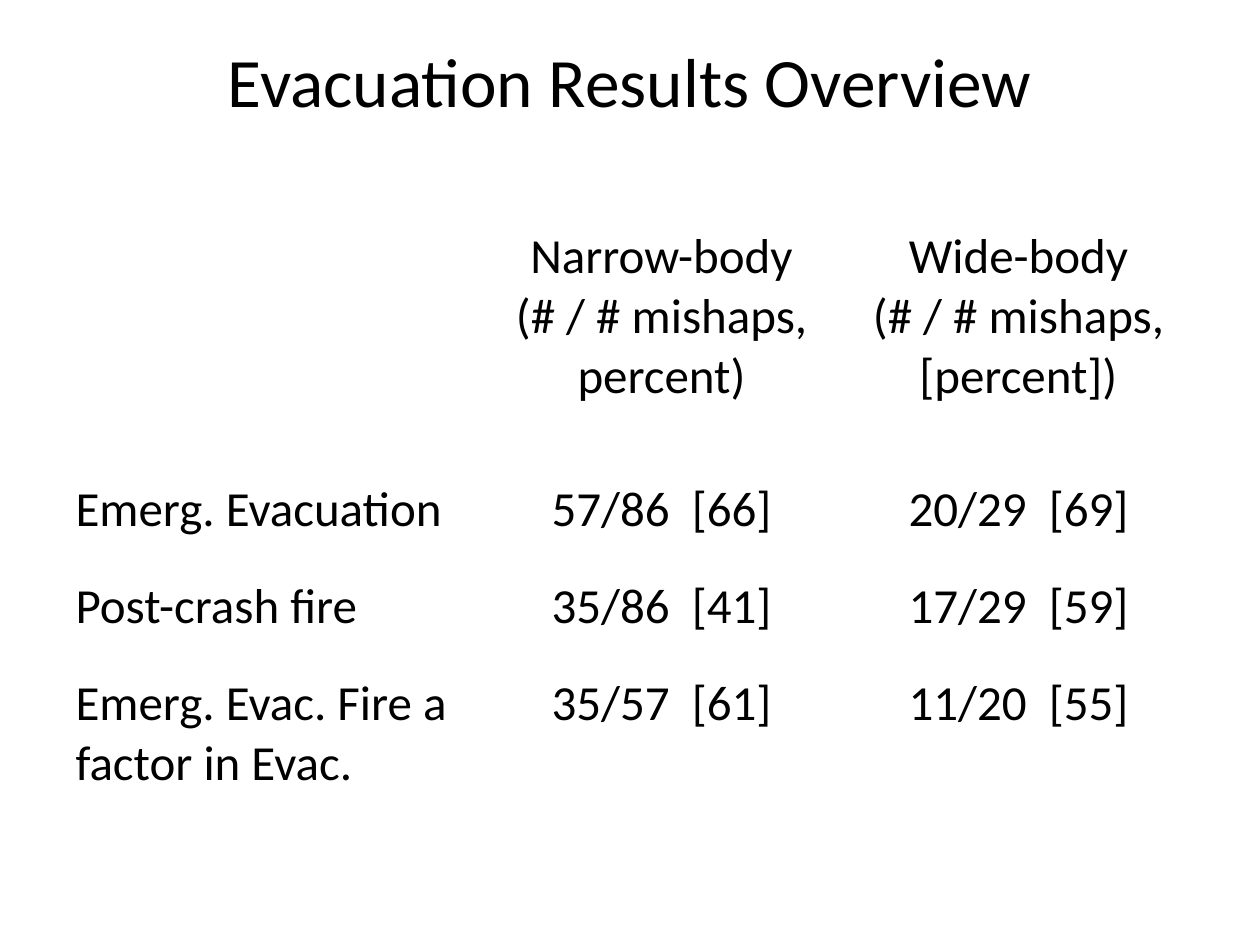
from pptx import Presentation
from pptx.dml.color import RGBColor
from pptx.enum.text import MSO_ANCHOR, PP_ALIGN
from pptx.util import Pt

BLACK = RGBColor(0x00, 0x00, 0x00)
FONT = "Calibri"
COLUMN_WIDTHS = (240, 204, 204)
ROW_HEIGHTS = (144.6, 55.4, 55.4, 75.6)
RESULTS = (
    ("", "Narrow-body\n(# / # mishaps, percent)", "Wide-body\n(# / # mishaps, [percent])"),
    ("Emerg. Evacuation", "57/86  [66]", "20/29  [69]"),
    ("Post-crash fire", "35/86  [41]", "17/29  [59]"),
    ("Emerg. Evac. Fire a factor in Evac.", "35/57  [61]", "11/20  [55]"),
)


def format_text(frame, size, alignment):
    """Give every paragraph of a text frame the same look."""
    for paragraph in frame.paragraphs:
        paragraph.alignment = alignment
        paragraph.font.name = FONT
        paragraph.font.size = Pt(size)
        paragraph.font.bold = False
        paragraph.font.color.rgb = BLACK


def place_title(slide, left, top, width, height):
    """Place the heading at the top of its box."""
    heading = slide.shapes.title
    heading.left, heading.top = Pt(left), Pt(top)
    heading.width, heading.height = Pt(width), Pt(height)
    frame = heading.text_frame
    frame.text = "Evacuation Results Overview"
    frame.vertical_anchor = MSO_ANCHOR.TOP
    frame.margin_top = Pt(0)
    format_text(frame, 39.6, PP_ALIGN.CENTER)


def place_results(slide, left, top, width, height):
    """Place the plain table of evacuation results in its box."""
    results = slide.shapes.add_table(
        len(RESULTS), len(COLUMN_WIDTHS), Pt(left), Pt(top), Pt(width), Pt(height)
    ).table
    results.first_row = False
    results.horz_banding = False
    for column, column_width in zip(results.columns, COLUMN_WIDTHS):
        column.width = Pt(column_width)
    for row, row_height, entries in zip(results.rows, ROW_HEIGHTS, RESULTS):
        row.height = Pt(row_height)
        for index, (cell, entry) in enumerate(zip(row.cells, entries)):
            cell.fill.background()
            cell.text = entry
            format_text(cell.text_frame, 28, PP_ALIGN.CENTER if index else PP_ALIGN.LEFT)


def main():
    """Build and save the slide."""
    presentation = Presentation()
    presentation.slide_width, presentation.slide_height = Pt(720), Pt(540)
    slide = presentation.slides.add_slide(presentation.slide_layouts[5])
    place_title(slide, 36, 21.6, 648, 90)
    place_results(slide, 36, 126, sum(COLUMN_WIDTHS), sum(ROW_HEIGHTS))
    presentation.save("out.pptx")


if __name__ == "__main__":
    main()
